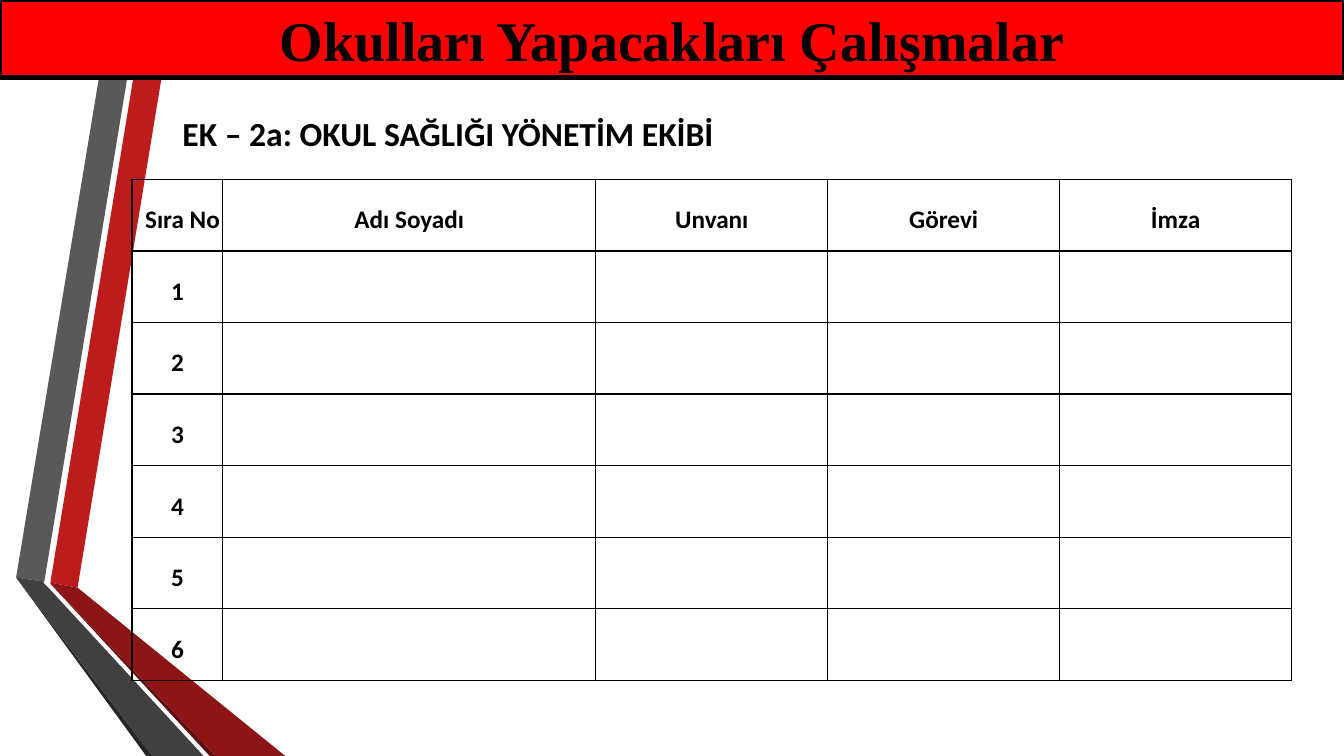
from lxml import etree
from pptx import Presentation
from pptx.dml.color import RGBColor
from pptx.enum.shapes import MSO_SHAPE
from pptx.enum.text import MSO_ANCHOR, PP_ALIGN
from pptx.oxml.ns import qn
from pptx.util import Inches, Pt

RECTANGLE = MSO_SHAPE.RECTANGLE
MIDDLE = MSO_ANCHOR.MIDDLE
LEFT, CENTER = PP_ALIGN.LEFT, PP_ALIGN.CENTER

BANNER = "Okulları Yapacakları Çalışmalar"
HEADING = "EK – 2a: OKUL SAĞLIĞI YÖNETİM EKİBİ"
HEADERS = ["Sıra No", "Adı Soyadı", "Unvanı", "Görevi", "İmza"]
MEMBER_COUNT = 6

SLIDE_WIDTH, SLIDE_HEIGHT = 13.33, 7.5
BANNER_HEIGHT = 0.77
TABLE_LEFT, TABLE_TOP = 1.31, 1.78
COLUMN_WIDTHS = [0.9, 3.7, 2.3, 2.3, 2.3]
ROW_HEIGHT = 0.71
BLACK = "000000"

UNITS_PER_INCH = 100
RIBBONS = [
    ("BC1C1C", [(50, 578), (77, 583), (173, 0), (145, 0)]),
    ("595959", [(139, 0), (111, 0), (16, 573), (44, 577)]),
    ("262626", [(16, 573), (145, 750), (151, 750)]),
    ("5E0E0E", [(50, 579), (208, 750), (214, 750)]),
    ("8D1515", [(50, 579), (214, 750), (283, 750), (77, 583), (50, 578)]),
    ("404040", [(202, 750), (48, 583), (43, 578), (44, 577), (16, 573), (151, 750)]),
]


def color(value):
    return RGBColor.from_string(value)


def write(frame, text, size, font="Calibri", align=LEFT):
    para = frame.paragraphs[0]
    para.alignment = align
    span = para.add_run()
    span.text = text
    span.font.size = Pt(size)
    span.font.name = font
    span.font.bold = True
    span.font.color.rgb = color(BLACK)


def set_margins(target, left, top, right, bottom):
    target.margin_left, target.margin_top = Inches(left), Inches(top)
    target.margin_right, target.margin_bottom = Inches(right), Inches(bottom)


def add_ribbon(page, fill, points):
    builder = page.shapes.build_freeform(*points[0], scale=Inches(1) / UNITS_PER_INCH)
    builder.add_line_segments(points[1:], close=True)
    ribbon = builder.convert_to_shape()
    ribbon.shadow.inherit = False
    ribbon.fill.solid()
    ribbon.fill.fore_color.rgb = color(fill)
    ribbon.line.fill.background()


def add_borders(cell):
    properties = cell._tc.get_or_add_tcPr()
    for side in ("a:lnL", "a:lnR", "a:lnT", "a:lnB"):
        border = etree.SubElement(properties, qn(side), w=str(Pt(1)))
        fill = etree.SubElement(border, qn("a:solidFill"))
        etree.SubElement(fill, qn("a:srgbClr"), val=BLACK)


def add_heading(page):
    box = page.shapes.add_textbox(Inches(1.73), Inches(1.07), Inches(10.85), Inches(0.45))
    frame = box.text_frame
    frame.word_wrap = True
    frame.vertical_anchor = MIDDLE
    set_margins(frame, 0.08, 0.05, 0.1, 0)
    write(frame, HEADING, 24)


def add_team_table(page):
    blanks = [""] * (len(HEADERS) - 1)
    rows = [HEADERS] + [[str(number), *blanks] for number in range(1, MEMBER_COUNT + 1)]
    table = page.shapes.add_table(
        len(rows), len(HEADERS), Inches(TABLE_LEFT), Inches(TABLE_TOP),
        Inches(sum(COLUMN_WIDTHS)), Inches(ROW_HEIGHT * len(rows))).table
    table.first_row = table.horz_banding = False
    for column, width in zip(table.columns, COLUMN_WIDTHS):
        column.width = Inches(width)
    for row_index, row in enumerate(rows):
        table.rows[row_index].height = Inches(ROW_HEIGHT)
        for column_index, text in enumerate(row):
            cell = table.cell(row_index, column_index)
            add_borders(cell)
            cell.fill.background()
            cell.vertical_anchor = MIDDLE
            is_corner = row_index == column_index == 0
            set_margins(cell, 0.13 if is_corner else 0, 0.1, 0, 0)
            if text:
                write(cell.text_frame, text, 18, align=LEFT if is_corner else CENTER)


def add_banner(page):
    banner = page.shapes.add_shape(RECTANGLE, 0, 0, Inches(SLIDE_WIDTH), Inches(BANNER_HEIGHT))
    banner.shadow.inherit = False
    banner.fill.solid()
    banner.fill.fore_color.rgb = color("FF0000")
    banner.line.color.rgb = color(BLACK)
    banner.line.width = Pt(3)
    banner.text_frame.vertical_anchor = MIDDLE
    write(banner.text_frame, BANNER, 40, font="Times New Roman", align=CENTER)


def main():
    deck = Presentation()
    deck.slide_width, deck.slide_height = Inches(SLIDE_WIDTH), Inches(SLIDE_HEIGHT)
    page = deck.slides.add_slide(deck.slide_layouts[6])
    for fill, points in RIBBONS:
        add_ribbon(page, fill, points)
    add_heading(page)
    add_team_table(page)
    add_banner(page)
    deck.save("out.pptx")


if __name__ == "__main__":
    main()
